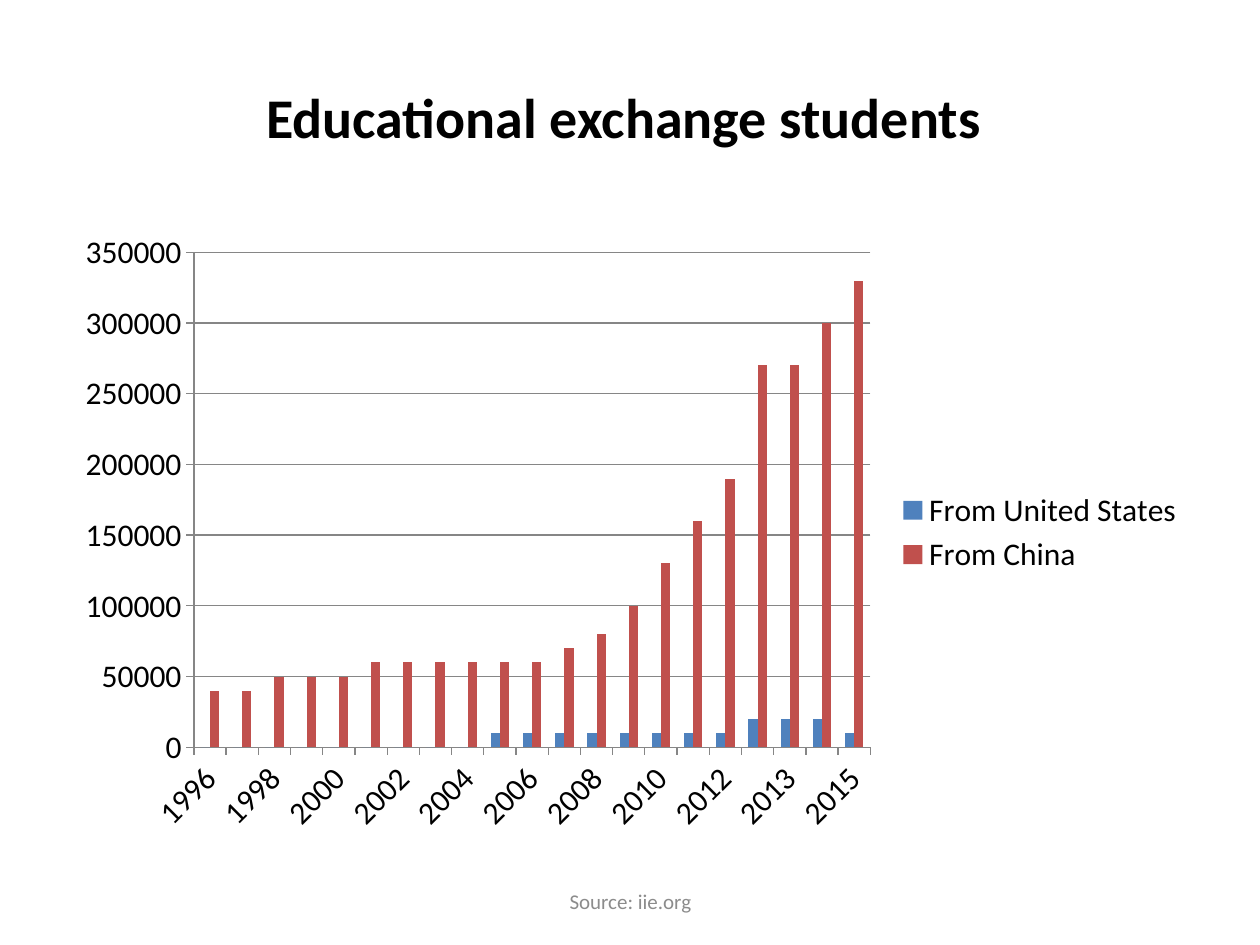
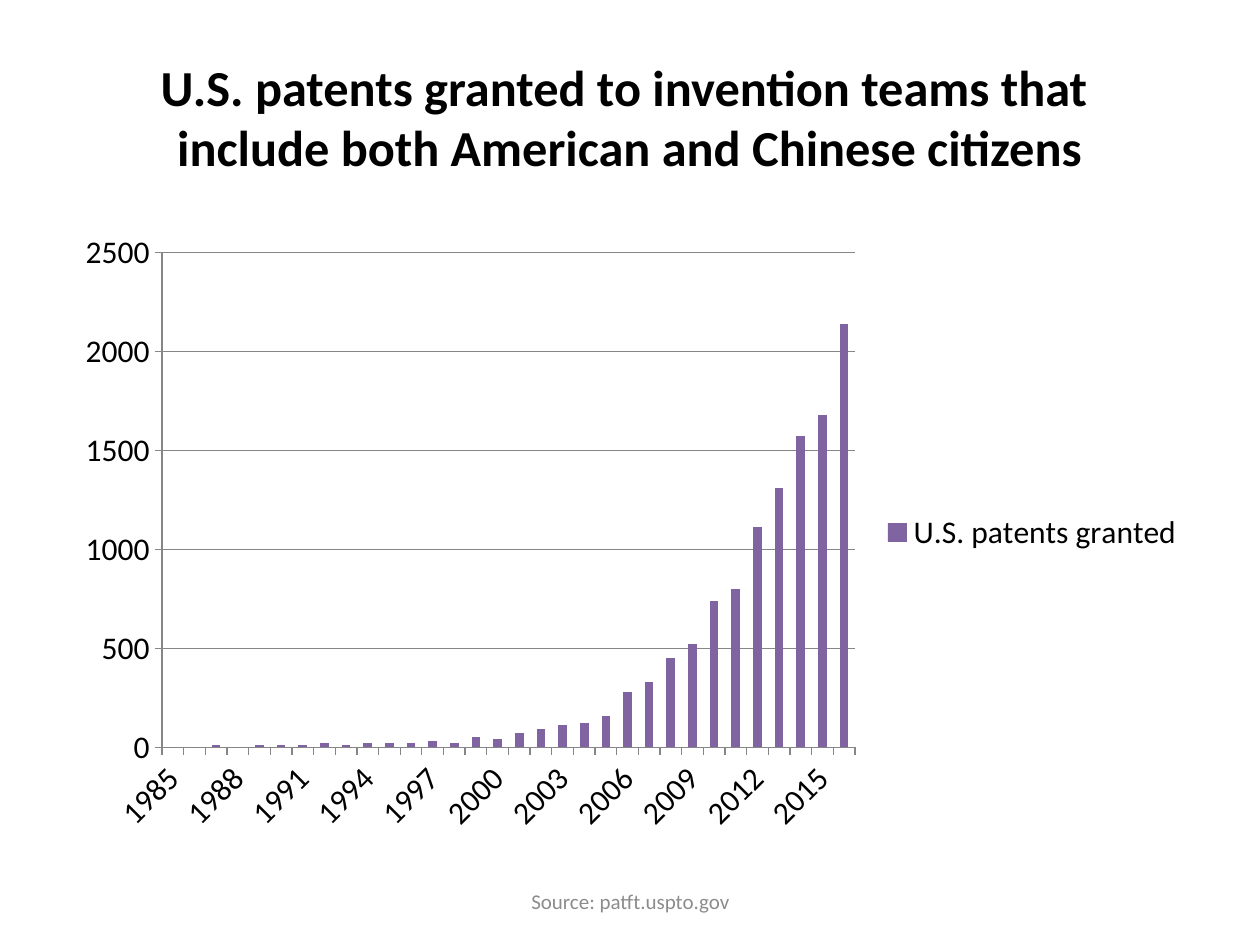
import pptx
import pptx.chart.data
import pptx.dml.color
import pptx.enum.chart
import pptx.enum.text
import pptx.util

Cm = pptx.util.Cm
Pt = pptx.util.Pt
FONT = "Calibri"
COLORS = {
    "ink": "000000",
    "note": "8C8C8C",
    "grid": "868686",
    "blue": "4F81BD",
    "red": "C0504D",
    "violet": "8064A2",
}
TITLE_BOX = (1.27, 0.76, 22.86, 3.18)
CHART_BOX = (1.27, 4.45, 22.86, 12.57)
SOURCE_BOX = (8.69, 17.65, 8.04, 1.02)

STUDENT_YEARS = [*range(1996, 2013), *range(2012, 2016)]
STUDENTS = [
    ("From United States", "blue",
     [0] * 9 + [10000] * 8 + [20000] * 3 + [10000]),
    ("From China", "red",
     [40000, 40000, 50000, 50000, 50000, 60000, 60000, 60000, 60000, 60000,
      60000, 70000, 80000, 100000, 130000, 160000, 190000, 270000, 270000,
      300000, 330000]),
]
PATENT_YEARS = range(1985, 2017)
PATENTS = [
    ("U.S. patents granted", "violet",
     [0, 0, 10, 0, 10, 10, 10, 20, 10, 20, 20, 20, 30, 20, 50, 40, 70, 90,
      110, 120, 160, 280, 330, 450, 520, 740, 800, 1110, 1310, 1570, 1680,
      2140]),
]


def color(name):
    return pptx.dml.color.RGBColor.from_string(COLORS[name])


def style(font, size, name, bold=False):
    font.name = FONT
    font.size = Pt(size)
    font.bold = bold
    font.color.rgb = color(name)


def add_text(slide, box, text, size, name, bold=False):
    frame = slide.shapes.add_textbox(*map(Cm, box)).text_frame
    frame.word_wrap = True
    frame.vertical_anchor = pptx.enum.text.MSO_ANCHOR.MIDDLE
    frame.text = text
    para = frame.paragraphs[0]
    para.alignment = pptx.enum.text.PP_ALIGN.CENTER
    style(para.font, size, name, bold)


def draw_line(line):
    line.color.rgb = color("grid")
    line.width = Pt(0.75)


def add_bars(slide, box, years, rows):
    data = pptx.chart.data.CategoryChartData()
    data.categories = [str(year) for year in years]
    for label, _, values in rows:
        data.add_series(label, values)
    kind = pptx.enum.chart.XL_CHART_TYPE.COLUMN_CLUSTERED
    chart = slide.shapes.add_chart(kind, *map(Cm, box), data).chart
    style(chart.font, 18, "ink")
    chart.has_title = False
    chart.has_legend = True
    chart.legend.position = pptx.enum.chart.XL_LEGEND_POSITION.RIGHT
    chart.legend.include_in_layout = False

    plot = chart.plots[0]
    plot.gap_width = 150
    plot.vary_by_categories = False
    for bars, (_, name, _) in zip(plot.series, rows):
        bars.format.fill.solid()
        bars.format.fill.fore_color.rgb = color(name)

    for axis in (chart.category_axis, chart.value_axis):
        axis.major_tick_mark = pptx.enum.chart.XL_TICK_MARK.OUTSIDE
        axis.minor_tick_mark = pptx.enum.chart.XL_TICK_MARK.NONE
        draw_line(axis.format.line)
    chart.value_axis.has_major_gridlines = True
    draw_line(chart.value_axis.major_gridlines.format.line)


def add_page(deck, title, size, years, rows, source):
    slide = deck.slides.add_slide(deck.slide_layouts[6])
    add_text(slide, TITLE_BOX, title, size, "ink", True)
    add_bars(slide, CHART_BOX, years, rows)
    add_text(slide, SOURCE_BOX, f"Source: {source}", 12, "note")


def main():
    deck = pptx.Presentation()
    deck.slide_width = Cm(25.4)
    deck.slide_height = Cm(19.05)
    add_page(deck, "Educational exchange students ", 32,
             STUDENT_YEARS, STUDENTS, "iie.org")
    add_page(deck, "U.S. patents granted to invention teams that \v"
             "include both American and Chinese citizens", 28.8,
             PATENT_YEARS, PATENTS, "patft.uspto.gov")
    deck.save("out.pptx")


if __name__ == "__main__":
    main()
